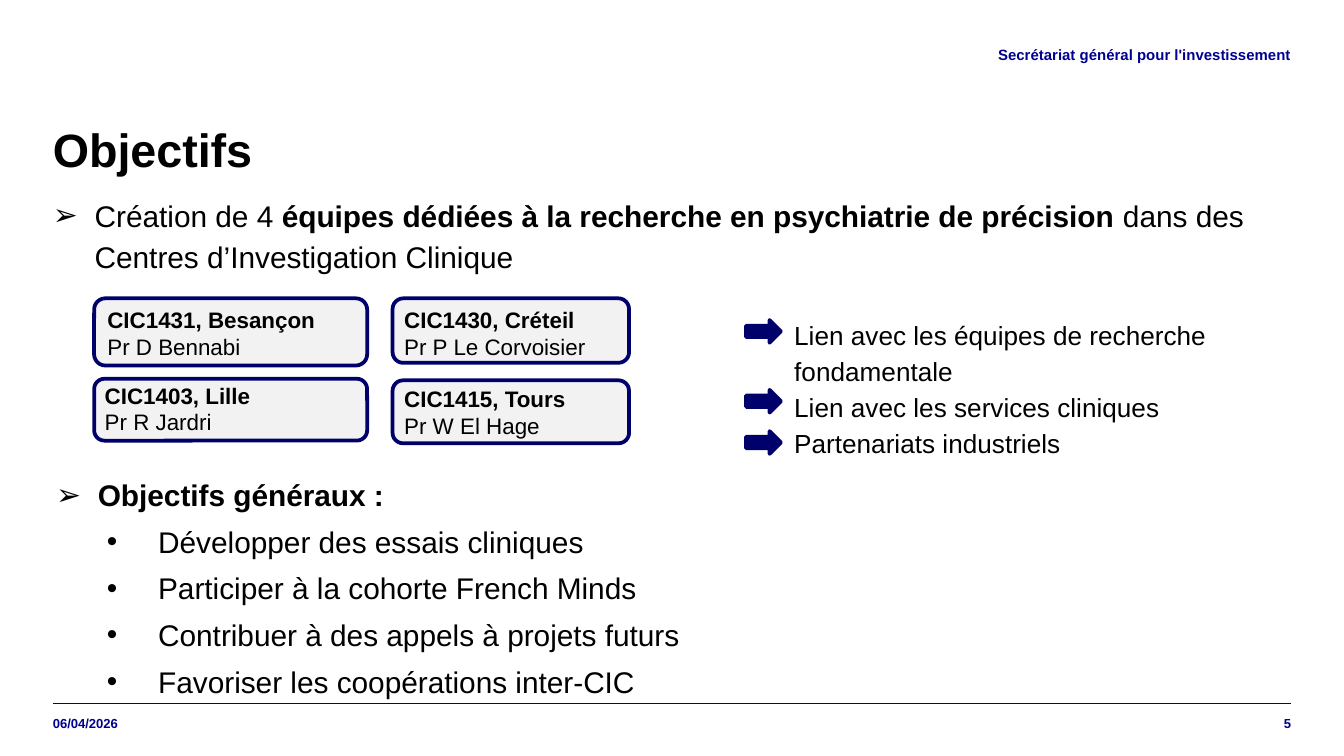
import dataclasses

import lxml.etree
import pptx
import pptx.dml.color
import pptx.enum.shapes
import pptx.enum.text
import pptx.oxml.ns
import pptx.util

Cm = pptx.util.Cm
Pt = pptx.util.Pt
RGB = pptx.dml.color.RGBColor.from_string
Anchor = pptx.enum.text.MSO_ANCHOR
Align = pptx.enum.text.PP_ALIGN
Shape = pptx.enum.shapes.MSO_SHAPE
qn = pptx.oxml.ns.qn


@dataclasses.dataclass(frozen=True)
class Theme:
    font: str = "Arial"
    ink: str = "000000"
    brand: str = "000091"
    outline: str = "00006B"
    arrow: str = "00006D"
    card: str = "F2F2F2"
    title: int = 25
    body: int = 16
    link: int = 14
    label: int = 12
    header: int = 8
    footer: int = 7


@dataclasses.dataclass(frozen=True)
class Box:
    left: float
    top: float
    width: float
    height: float

    def inner(self, left, top, width, height):
        return Box(self.left + left, self.top + top, width, height)

    def lengths(self):
        return [Cm(v) for v in (self.left, self.top, self.width, self.height)]


THEME = Theme()
FLUSH = dict.fromkeys(("margin_left", "margin_top", "margin_right", "margin_bottom"), 0)
MIDDLE = {**FLUSH, "vertical_anchor": Anchor.MIDDLE}
GROW = {"auto_size": pptx.enum.text.MSO_AUTO_SIZE.SHAPE_TO_FIT_TEXT}


def apply(target, values):
    for name, value in values.items():
        setattr(target, name, value)


def add_text_frame(slide, box, frame_format):
    frame = slide.shapes.add_textbox(*box.lengths()).text_frame
    apply(frame, {"word_wrap": True, **frame_format})
    return frame


def add_run(paragraph, text, size, bold=False, color=THEME.ink):
    run = paragraph.add_run()
    run.text = text
    apply(run.font, {"name": THEME.font, "size": Pt(size), "bold": bold})
    run.font.color.rgb = RGB(color)


def next_paragraph(frame, index, **paragraph_format):
    paragraph = frame.add_paragraph() if index else frame.paragraphs[0]
    apply(paragraph, paragraph_format)
    return paragraph


def add_bullet(paragraph, mark, indent, hanging):
    properties = paragraph._p.get_or_add_pPr()
    properties.set("marL", str(Cm(indent)))
    properties.set("indent", str(-Cm(hanging)))
    lxml.etree.SubElement(properties, qn("a:buFont")).set("typeface", THEME.font)
    lxml.etree.SubElement(properties, qn("a:buChar")).set("char", mark)


def add_outlined(slide, preset, box, fill):
    shape = slide.shapes.add_shape(preset, *box.lengths())
    shape.shadow.inherit = False
    shape.fill.solid()
    shape.fill.fore_color.rgb = RGB(fill)
    shape.line.color.rgb = RGB(THEME.outline)
    shape.line.width = Pt(2)


def add_brand_label(slide, box, text, size, alignment):
    frame = add_text_frame(slide, box, MIDDLE)
    paragraph = next_paragraph(frame, 0, alignment=alignment)
    add_run(paragraph, text, size, True, THEME.brand)


def add_header(slide, box):
    add_brand_label(slide, box, "Secrétariat général pour l'investissement",
                    THEME.header, Align.RIGHT)


def add_footer(slide, box):
    left, top, width, _ = box.lengths()
    rule = slide.shapes.add_connector(
        pptx.enum.shapes.MSO_CONNECTOR.STRAIGHT, left, top, left + width, top)
    rule.line.color.rgb = RGB(THEME.brand)
    rule.line.width = Pt(0.5)
    lxml.etree.SubElement(rule._element.spPr, qn("a:effectLst"))
    add_brand_label(slide, box.inner(0, 0, 3.4, box.height),
                    "06/04/2026", THEME.footer, Align.LEFT)
    add_brand_label(slide, box.inner(box.width - 1.3, 0, 1.3, box.height),
                    "5", THEME.footer, Align.RIGHT)


def add_title(slide, box):
    paragraph = next_paragraph(add_text_frame(slide, box, FLUSH), 0, line_spacing=0.9)
    add_run(paragraph, "Objectifs", THEME.title, True)


def add_creation(slide, box):
    paragraph = next_paragraph(add_text_frame(slide, box, FLUSH), 0,
                               line_spacing=1.15, space_after=Pt(5))
    add_bullet(paragraph, "➢", 0.79, 0.79)
    for text, bold in (
        ("Création de 4 ", False),
        ("équipes dédiées à la recherche en psychiatrie de précision ", True),
        ("dans des Centres d’Investigation Clinique", False),
    ):
        add_run(paragraph, text, THEME.body, bold)


def add_centres(slide, box):
    centres = (
        ("CIC1431, Besançon", "Pr D Bennabi", (0, 0, 5.16, 1.27), (0, 0.02, 4.88, 1.27)),
        ("CIC1430, Créteil", "Pr P Le Corvoisier", (5.64, 0, 4.47, 1.22), (5.61, 0.02, 4.06, 1.27)),
        ("CIC1403, Lille", "Pr R Jardri", (0, 1.52, 5.16, 1.17), (-0.05, 1.45, 3.73, 1.27)),
        ("CIC1415, Tours", "Pr W El Hage", (5.64, 1.55, 4.47, 1.19), (5.61, 1.52, 4.06, 1.27)),
    )
    for centre, lead, card, label in centres:
        add_outlined(slide, Shape.ROUNDED_RECTANGLE, box.inner(*card), THEME.card)
        paragraph = next_paragraph(add_text_frame(slide, box.inner(*label), GROW), 0)
        add_run(paragraph, centre, THEME.label, True)
        paragraph.add_line_break()
        add_run(paragraph, lead, THEME.label)


def add_links(slide, box):
    links = (
        ("Lien avec les équipes de recherche fondamentale", 0.23),
        ("Lien avec les services cliniques", 1.55),
        ("Partenariats industriels", 2.33),
    )
    frame = add_text_frame(slide, box.inner(0.66, 0, box.width - 0.66, box.height), GROW)
    for index, (text, arrow_top) in enumerate(links):
        add_run(next_paragraph(frame, index, line_spacing=1.15), text, THEME.link)
        add_outlined(slide, Shape.RIGHT_ARROW, box.inner(0, arrow_top, 0.66, 0.43), THEME.arrow)


def add_goals(slide, box):
    goals = (
        "Objectifs généraux :",
        "Développer des essais cliniques",
        "Participer à la cohorte French Minds",
        "Contribuer à des appels à projets futurs",
        "Favoriser les coopérations inter-CIC",
    )
    frame = add_text_frame(slide, box, GROW)
    for index, text in enumerate(goals):
        heading = index == 0
        paragraph = next_paragraph(frame, index, line_spacing=1.3, level=0 if heading else 1)
        add_bullet(paragraph, *(("➢", 0.79, 0.79) if heading else ("•", 1.93, 0.97)))
        add_run(paragraph, text, THEME.body, heading)


def main():
    deck = pptx.Presentation()
    apply(deck, {"slide_width": Cm(25.4), "slide_height": Cm(14.29)})
    slide = deck.slides.add_slide(deck.slide_layouts[6])
    regions = (
        (add_footer, Box(1, 13.29, 23.4, 0.76)),
        (add_title, Box(1, 2.41, 23.4, 1.5)),
        (add_header, Box(4.75, 0.53, 19.65, 1)),
        (add_creation, Box(1, 3.63, 23.4, 8.92)),
        (add_centres, Box(1.78, 5.64, 10.11, 2.74)),
        (add_links, Box(14.1, 5.82, 11.3, 2.95)),
        (add_goals, Box(0.81, 8.69, 18.92, 4.6)),
    )
    for add_region, box in regions:
        add_region(slide, box)
    deck.save("out.pptx")


if __name__ == "__main__":
    main()
